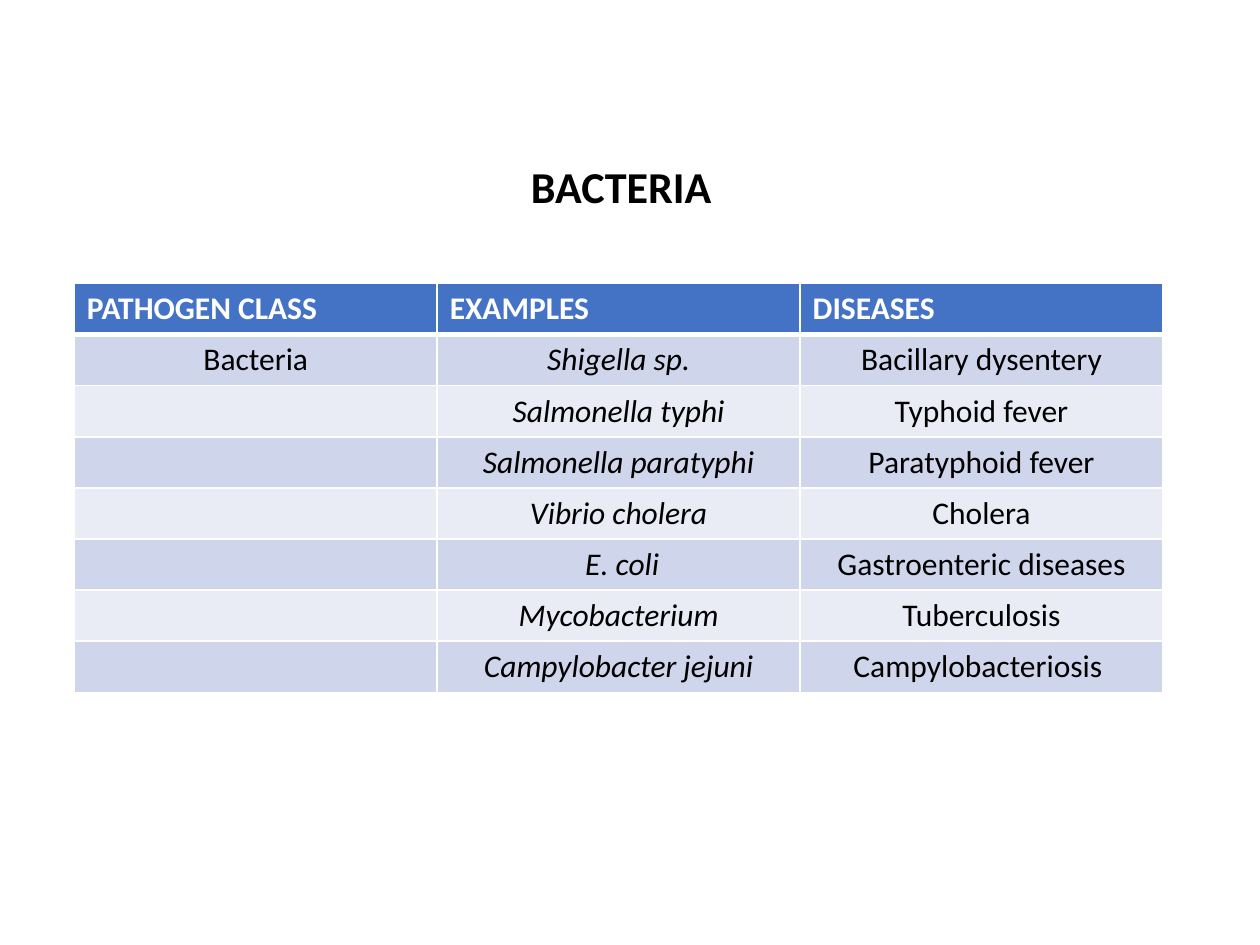
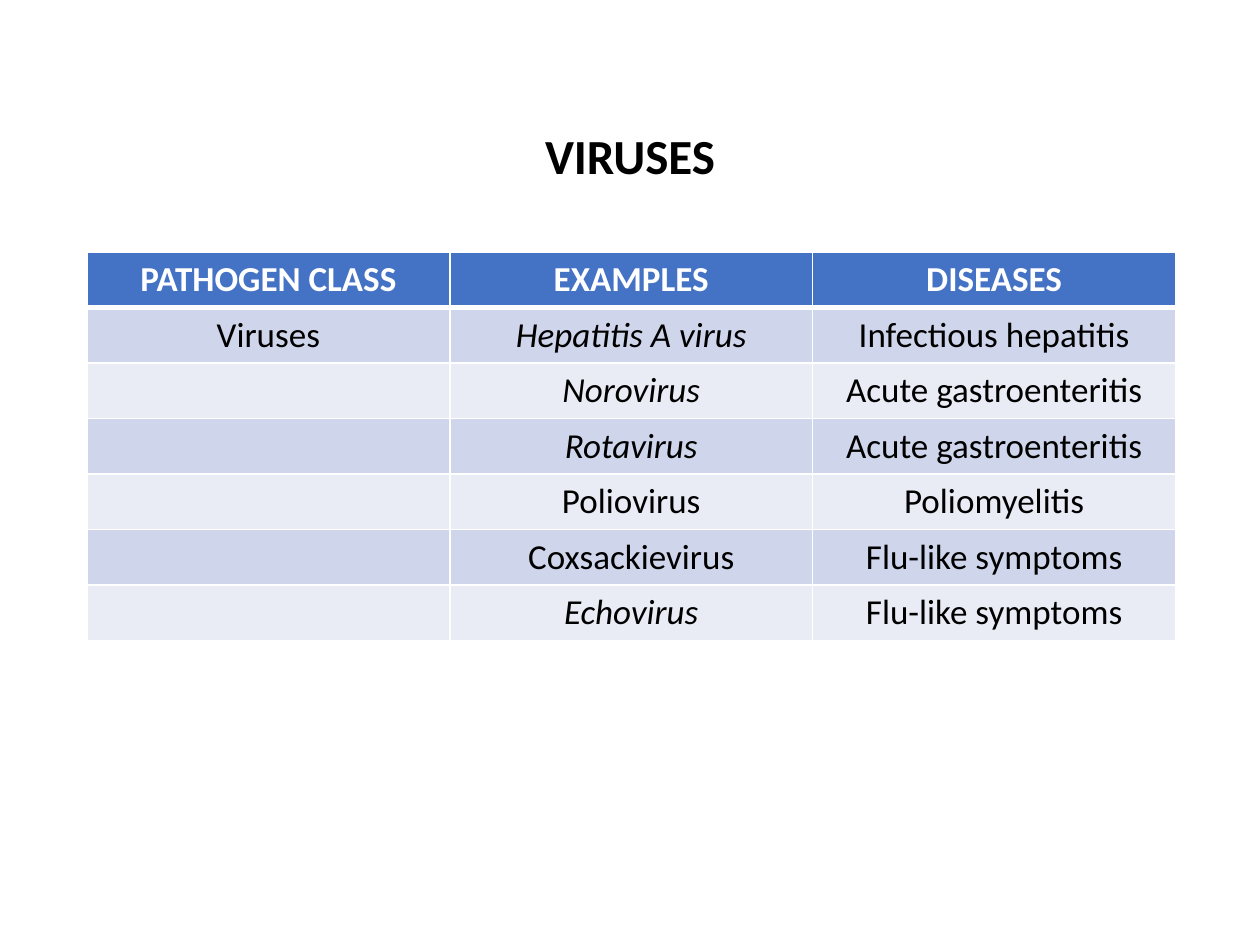
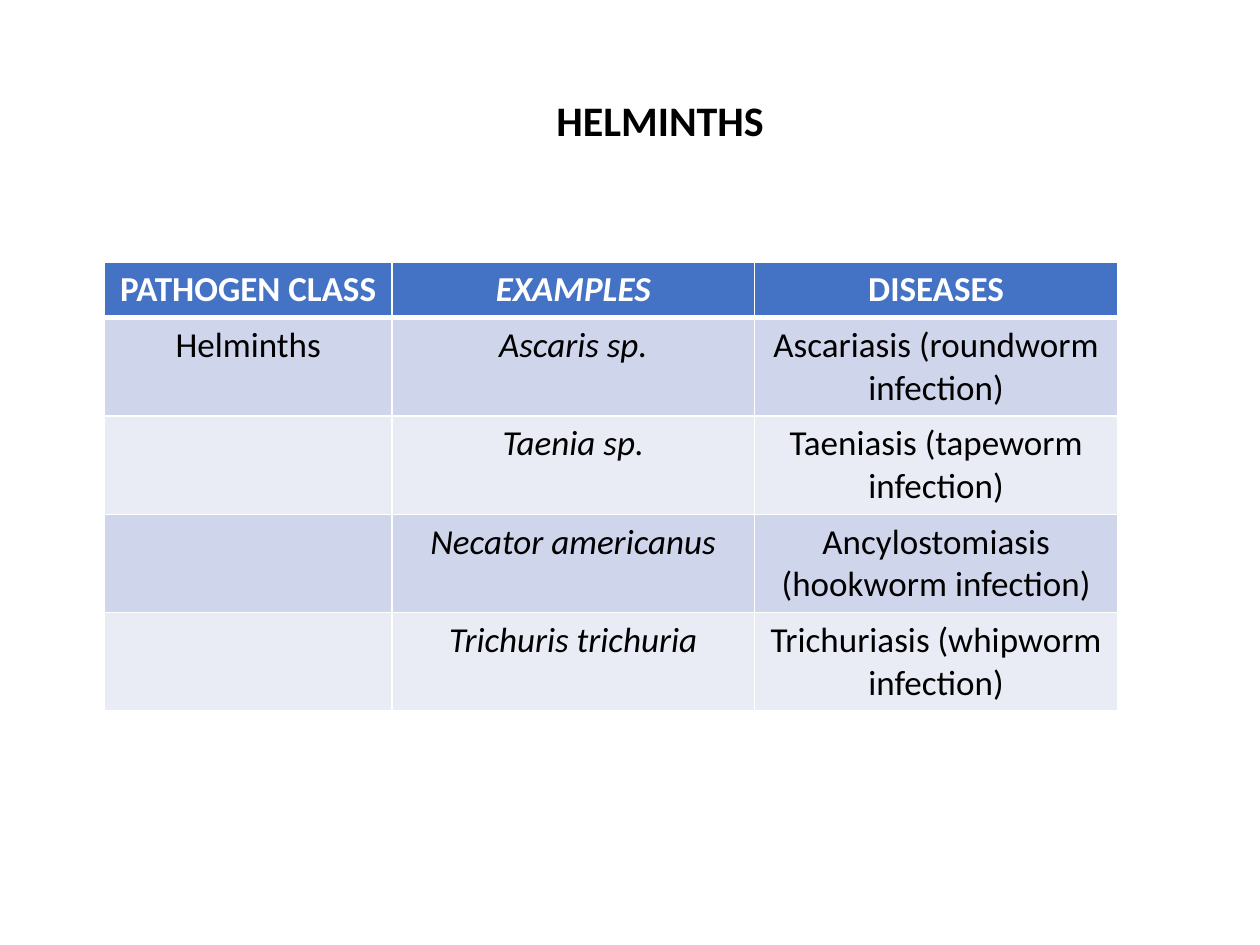
"""Build three slides of tables that list pathogens and their diseases."""
import pptx
import pptx.dml.color
import pptx.enum.text
import pptx.oxml
import pptx.oxml.ns
import pptx.util

RGBColor = pptx.dml.color.RGBColor
ALIGN = pptx.enum.text.PP_ALIGN
BLACK = RGBColor(0x00, 0x00, 0x00)
WHITE = RGBColor(0xFF, 0xFF, 0xFF)
HEADER_BLUE = RGBColor(0x44, 0x72, 0xC4)
BANDS = (RGBColor(0xE9, 0xEB, 0xF5), RGBColor(0xCF, 0xD5, 0xEA))

FONT = "Calibri"
GRID_COLUMNS, GRID_ROWS = 100, 75
HEADINGS = ("PATHOGEN CLASS", "EXAMPLES", "DISEASES")
UPRIGHT_EXAMPLES = {"Poliovirus", "Coxsackievirus"}

BACTERIA = (
    ("Shigella sp.", "Bacillary dysentery"),
    ("Salmonella typhi", "Typhoid fever"),
    ("Salmonella paratyphi", "Paratyphoid fever"),
    ("Vibrio cholera", "Cholera"),
    (" E. coli", "Gastroenteric diseases"),
    ("Mycobacterium", "Tuberculosis"),
    ("Campylobacter jejuni", "Campylobacteriosis "),
)
VIRUSES = (
    ("Hepatitis A virus", "Infectious hepatitis"),
    ("Norovirus", "Acute gastroenteritis"),
    ("Rotavirus", "Acute gastroenteritis"),
    ("Poliovirus", "Poliomyelitis"),
    ("Coxsackievirus", "Flu-like symptoms"),
    ("Echovirus", "Flu-like symptoms"),
)
HELMINTHS = (
    ("Ascaris sp.", "Ascariasis (roundworm infection)"),
    ("Taenia sp.", "Taeniasis (tapeworm infection)"),
    ("Necator americanus", "Ancylostomiasis (hookworm infection)"),
    ("Trichuris trichuria", "Trichuriasis (whipworm infection)"),
)


class Deck:
    """Hold the presentation, its style and the current slide."""

    def __init__(self):
        self.prs = pptx.Presentation()
        self.prs.slide_width = pptx.util.Inches(10)
        self.prs.slide_height = pptx.util.Inches(7.5)

    def x(self, columns):
        """Turn grid columns into a length."""
        return round(self.prs.slide_width * columns / GRID_COLUMNS)

    def y(self, rows):
        """Turn grid rows into a length."""
        return round(self.prs.slide_height * rows / GRID_ROWS)

    def add_slide(self):
        """Start a slide that has only a title."""
        self.slide = self.prs.slides.add_slide(self.prs.slide_layouts[5])

    def set_text(self, tf, text, size, color, bold=False, italic=False, align=ALIGN.CENTER):
        """Put one formatted paragraph in a text frame."""
        tf.text = text
        p = tf.paragraphs[0]
        p.alignment = align
        p.font.size = pptx.util.Pt(size)
        for r in p.runs:
            r.font.name = FONT
            r.font.size = pptx.util.Pt(size)
            r.font.bold = bold
            r.font.italic = italic
            r.font.color.rgb = color
        return p

    def title(self, text, left, top, height, size):
        """Place and fill the title placeholder."""
        sp = self.slide.shapes.title
        sp.left, sp.top = self.x(left), self.y(top)
        sp.width, sp.height = self.x(86.2), self.y(height)
        tf = sp.text_frame
        tf.word_wrap = True
        tf.auto_size = pptx.enum.text.MSO_AUTO_SIZE.NONE
        tf.vertical_anchor = pptx.enum.text.MSO_ANCHOR.MIDDLE
        p = self.set_text(tf, text, size, BLACK, bold=True)
        p.line_spacing = 0.9

    def borders(self, cell, top, bottom):
        """Draw white lines round a cell, with top and bottom widths in points."""
        tcPr = cell._tc.get_or_add_tcPr()
        for side, width in (("L", 1), ("R", 1), ("T", top), ("B", bottom)):
            tcPr.append(pptx.oxml.parse_xml(
                f'<a:ln{side} {pptx.oxml.ns.nsdecls("a")} w="{pptx.util.Pt(width)}">'
                f'<a:solidFill><a:srgbClr val="{WHITE}"/></a:solidFill></a:ln{side}>'))

    def table(self, pathogen, pairs, left, top, size, row_heights,
              first_width=28.8, header_align=ALIGN.CENTER, header_italic=False):
        """Add a banded table of one pathogen class."""
        names = [pathogen] + [""] * (len(pairs) - 1)
        rows = [HEADINGS] + [(name, *pair) for name, pair in zip(names, pairs)]
        widths = (first_width, 28.8, 28.8)
        heights = [row_heights[0]] + [row_heights[1]] * len(pairs)
        table = self.slide.shapes.add_table(
            len(rows), len(widths), self.x(left), self.y(top),
            self.x(sum(widths)), self.y(sum(heights))).table
        for column, width in zip(table.columns, widths):
            column.width = self.x(width)
        for i, (values, height) in enumerate(zip(rows, heights)):
            table.rows[i].height = self.y(height)
            header = i == 0
            for j, text in enumerate(values):
                cell = table.cell(i, j)
                self.borders(cell, 3 if i == 1 else 1, 3 if header else 1)
                cell.fill.solid()
                cell.fill.fore_color.rgb = HEADER_BLUE if header else BANDS[i % 2]
                italic = header_italic if header else text not in UPRIGHT_EXAMPLES
                self.set_text(cell.text_frame, text, size, WHITE if header else BLACK,
                              bold=header, italic=j == 1 and italic,
                              align=header_align if header else ALIGN.CENTER)


def main():
    """Build and save the slides."""
    deck = Deck()

    deck.add_slide()
    deck.title("BACTERIA", 6.2, 12.5, 5, 25.2)
    deck.table("Bacteria", BACTERIA, 5.9, 22.5, 18, (4, 4), header_align=ALIGN.LEFT)

    deck.add_slide()
    deck.title("VIRUSES", 6.9, 5.3, 14.5, 28)
    deck.table("Viruses", VIRUSES, 6.9, 20, 20, (4.33, 4.33))

    deck.add_slide()
    deck.title("HELMINTHS", 9.3, 2.5, 14.5, 24)
    deck.table("Helminths", HELMINTHS, 8.3, 20.8, 20, (4.3, 7.7),
               first_width=22.8, header_italic=True)

    deck.prs.save("out.pptx")


if __name__ == "__main__":
    main()
